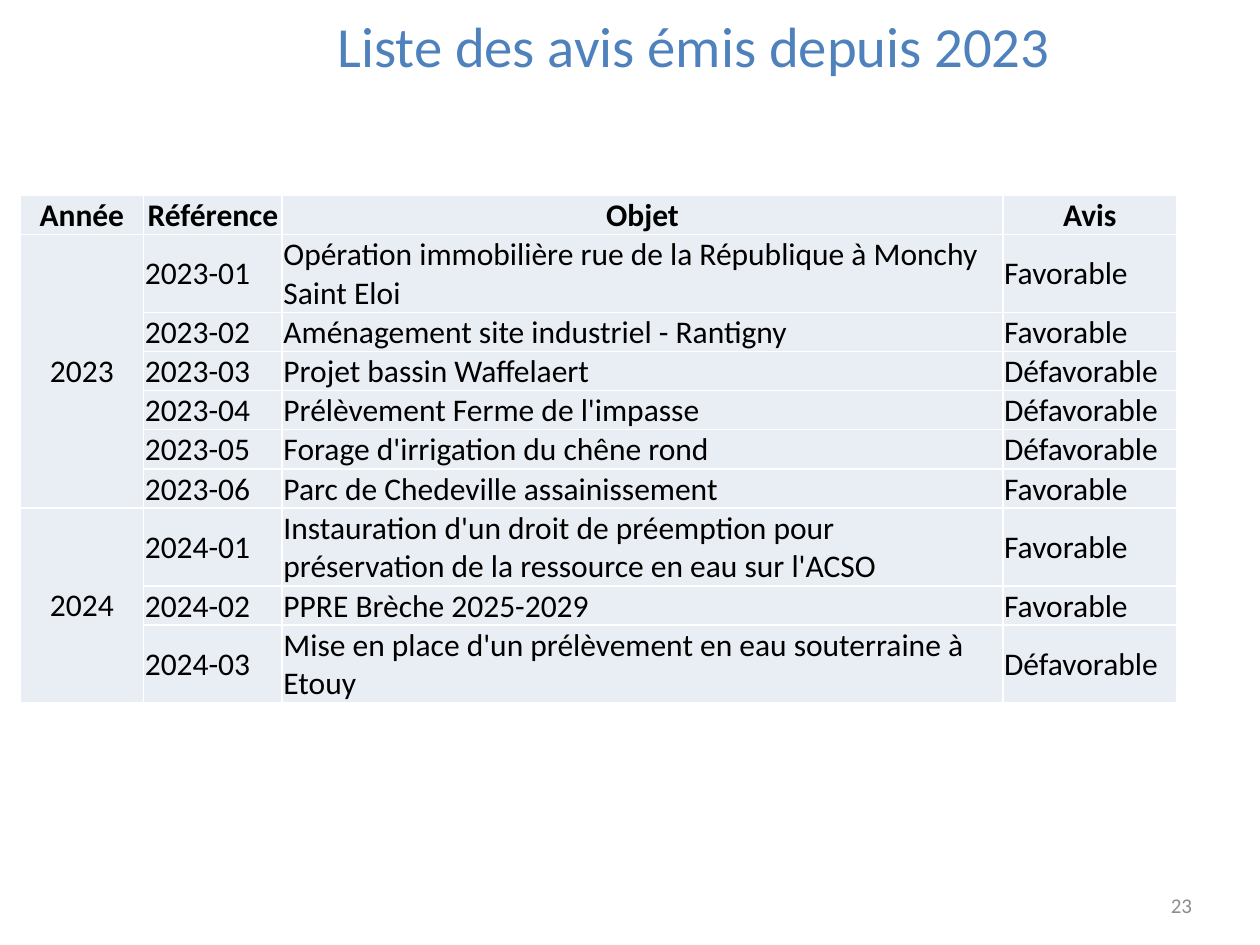
import pptx
import pptx.util
import pptx.dml.color
import pptx.enum.text
import pptx.oxml
import pptx.oxml.ns

# Content
TITLE = "Liste des avis émis depuis 2023"
PAGE = "23"
HEAD = ("Année", "Référence", "Objet", "Avis")
YES, NO = "Favorable", "Défavorable"
# Each year lists (subject, opinion, lines of text)
YEARS = {
    "2023": [
        ("Opération immobilière rue de la République à Monchy Saint Eloi", YES, 2),
        ("Aménagement site industriel - Rantigny", YES, 1),
        ("Projet bassin Waffelaert", NO, 1),
        ("Prélèvement Ferme de l'impasse", NO, 1),
        ("Forage d'irrigation du chêne rond", NO, 1),
        ("Parc de Chedeville assainissement", YES, 1),
    ],
    "2024": [
        ("Instauration d'un droit de préemption pour préservation de la "
         "ressource en eau sur l'ACSO", YES, 2),
        ("PPRE Brèche 2025-2029", YES, 1),
        ("Mise en place d'un prélèvement en eau souterraine à Etouy", NO, 2),
    ],
}
COLS = (0.98, 1.1, 5.72, 1.38)
LINE = 0.31
FONT = "Calibri"
HUES = {"title": "4F81BD", "page": "8C8C8C", "text": "000000",
        "cell": "E9EDF4", "edge": "FFFFFF"}

Inch = pptx.util.Inches
Align = pptx.enum.text.PP_ALIGN
Anchor = pptx.enum.text.MSO_ANCHOR


def tint(name):
    return pptx.dml.color.RGBColor.from_string(HUES[name])


def write(frame, text, size, hue, align, bold=False):
    par = frame.paragraphs[0]
    par.alignment = align
    run = par.add_run()
    run.text = text
    run.font.name = FONT
    run.font.size = pptx.util.Pt(size)
    run.font.bold = bold
    run.font.color.rgb = tint(hue)


def edge(cell):
    props = cell._tc.get_or_add_tcPr()
    for side in "LRTB":
        props.append(pptx.oxml.parse_xml(
            f'<a:ln{side} {pptx.oxml.ns.nsdecls("a")} w="12700"><a:solidFill>'
            f'<a:srgbClr val="{HUES["edge"]}"/></a:solidFill></a:ln{side}>'))


def style(cell, anchor):
    cell.margin_left = cell.margin_right = cell.margin_top = Inch(0.01)
    cell.margin_bottom = 0
    cell.vertical_anchor = anchor
    edge(cell)
    cell.fill.solid()
    cell.fill.fore_color.rgb = tint("cell")


deck = pptx.Presentation()
deck.slide_width, deck.slide_height = Inch(10), Inch(7.5)
slide = deck.slides.add_slide(deck.slide_layouts[5])

# Title
title = slide.shapes.title
title.left, title.top, title.width, title.height = map(Inch, (1.51, 0.01, 7.99, 0.69))
title.text_frame.vertical_anchor = Anchor.MIDDLE
write(title.text_frame, TITLE, 32.4, "title", Align.CENTER)

# Page number
page = slide.shapes.add_textbox(*map(Inch, (7.23, 6.98, 2.33, 0.4))).text_frame
page.word_wrap = True
page.vertical_anchor = Anchor.MIDDLE
write(page, PAGE, 12, "page", Align.RIGHT)

# Table grid
lines = [1] + [item[2] for items in YEARS.values() for item in items]
grid = slide.shapes.add_table(
    len(lines), len(COLS), Inch(0.16), Inch(1.55),
    Inch(sum(COLS)), Inch(LINE * sum(lines))).table
grid.first_row = grid.horz_banding = False
for col, width in zip(grid.columns, COLS):
    col.width = Inch(width)
for row, count in zip(grid.rows, lines):
    row.height = Inch(LINE * count)
    for cell in row.cells:
        style(cell, Anchor.MIDDLE)

# Header row
for col, text in enumerate(HEAD):
    cell = grid.cell(0, col)
    cell.vertical_anchor = Anchor.BOTTOM
    write(cell.text_frame, text, 18, "text", Align.CENTER, True)

# Opinions by year
top = 1
for year, items in YEARS.items():
    first = grid.cell(top, 0)
    first.merge(grid.cell(top + len(items) - 1, 0))
    write(first.text_frame, year, 18, "text", Align.CENTER)
    for num, (topic, view, _) in enumerate(items, 1):
        for col, text in enumerate((f"{year}-{num:02}", topic, view), 1):
            write(grid.cell(top, col).text_frame, text, 18, "text", Align.LEFT)
        top += 1

deck.save("out.pptx")
